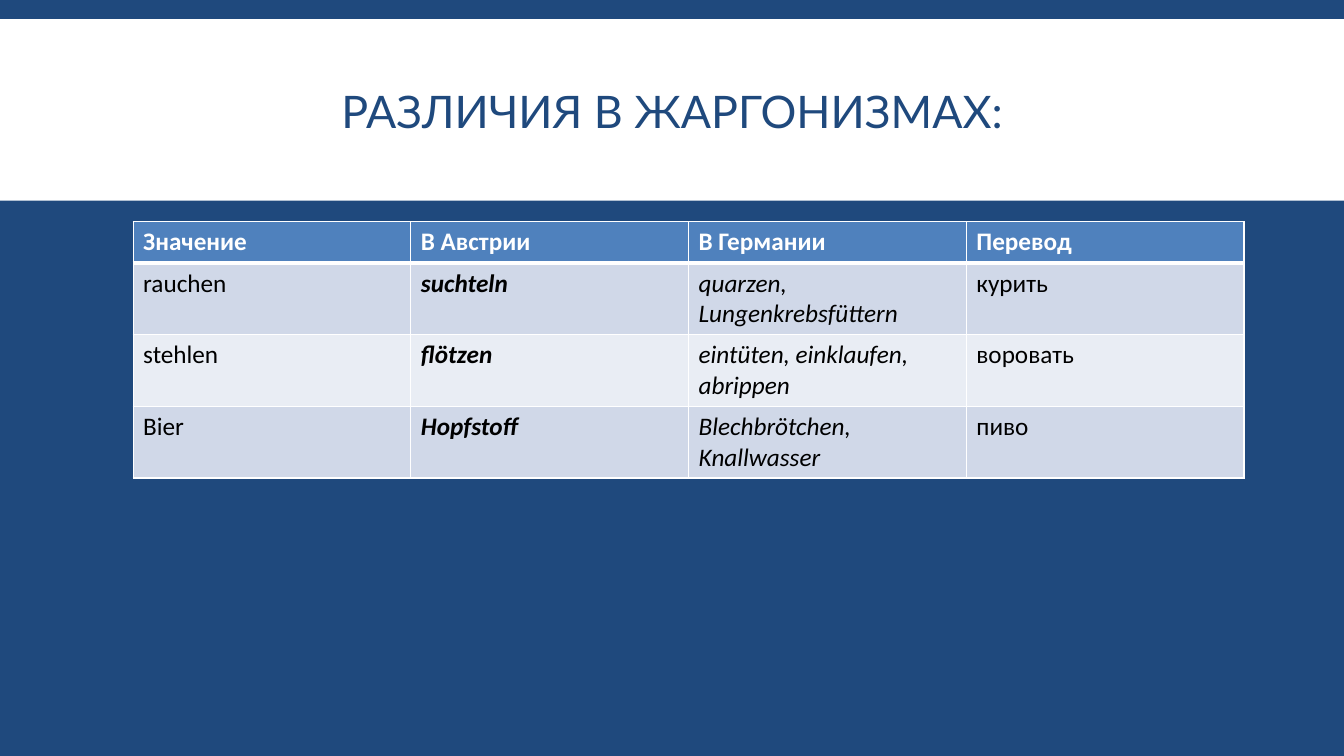
from lxml.etree import SubElement
from pptx import Presentation
from pptx.dml.color import RGBColor
from pptx.enum.shapes import MSO_SHAPE
from pptx.enum.text import MSO_ANCHOR, PP_ALIGN
from pptx.oxml.ns import qn
from pptx.util import Inches, Pt

ROWS = [
    ("Значение", "В Австрии", "В Германии", "Перевод"),
    ("rauchen", "suchteln", "quarzen, Lungenkrebsfüttern", "курить"),
    ("stehlen", "flötzen", "eintüten, einklaufen, abrippen", "воровать"),
    ("Bier", "Hopfstoff", "Blechbrötchen, Knallwasser", "пиво"),
]


def rgb(color):
    return RGBColor.from_string(color)


class SlideBuilder:
    NAVY, WHITE, BLACK = "1F497D", "FFFFFF", "000000"
    HEADER, BANDS = "4F81BD", ("E9EDF4", "D0D8E8")
    TITLE_FONT, TABLE_FONT = "Lato", "Calibri"

    def __init__(self, prs):
        self.slide = prs.slides.add_slide(prs.slide_layouts[5])
        fill = self.slide.background.fill
        fill.solid()
        fill.fore_color.rgb = rgb(self.NAVY)

    def band(self, x, y, w, h):
        sp = self.slide.shapes.add_shape(
            MSO_SHAPE.RECTANGLE, Inches(x), Inches(y), Inches(w), Inches(h))
        sp.shadow.inherit = False
        sp.fill.solid()
        sp.fill.fore_color.rgb = rgb(self.WHITE)
        sp.line.fill.background()

    def title(self, text, x, y, w, h):
        """Fill the title placeholder and bring it to the front."""
        sp = self.slide.shapes.title
        sp.element.getparent().append(sp.element)
        sp.left, sp.top, sp.width, sp.height = map(Inches, (x, y, w, h))
        tf = sp.text_frame
        tf.text = text
        tf.word_wrap = True
        tf.vertical_anchor = MSO_ANCHOR.MIDDLE
        p = tf.paragraphs[0]
        p.alignment = PP_ALIGN.CENTER
        p.line_spacing = 0.85
        self.style(p, self.TITLE_FONT, 32, self.NAVY)

    def style(self, p, name, size, color, bold=False, italic=False):
        font = p.font
        font.name, font.size = name, Pt(size)
        font.bold, font.italic = bold, italic
        font.color.rgb = rgb(color)

    def borders(self, cell, **widths):
        """Draw white cell borders; widths are points by side, in schema order."""
        tc_pr = cell._tc.get_or_add_tcPr()
        for i, (side, width) in enumerate(widths.items()):
            ln = SubElement(tc_pr, qn(f"a:{side}"), w=str(Pt(width)))
            fill = SubElement(ln, qn("a:solidFill"))
            SubElement(fill, qn("a:srgbClr"), val=self.WHITE)
            tc_pr.insert(i, ln)

    def table(self, rows, x, y, w, header_h, row_h):
        """Add a table with a header row, banded rows and italic middle columns."""
        h = header_h + row_h * (len(rows) - 1)
        table = self.slide.shapes.add_table(
            len(rows), len(rows[0]), Inches(x), Inches(y), Inches(w), Inches(h)).table
        for r, row in enumerate(rows):
            header = r == 0
            table.rows[r].height = Inches(header_h if header else row_h)
            for c, text in enumerate(row):
                cell = table.cell(r, c)
                cell.text = text
                cell.fill.solid()
                cell.fill.fore_color.rgb = rgb(self.HEADER if header else self.BANDS[r % 2])
                self.style(cell.text_frame.paragraphs[0], self.TABLE_FONT, 18,
                           self.WHITE if header else self.BLACK,
                           bold=header or c == 1, italic=not header and c in (1, 2))
                self.borders(cell, lnL=1, lnR=1, lnT=3 if r == 1 else 1,
                             lnB=3 if header else 1)


def main():
    prs = Presentation()
    prs.slide_width, prs.slide_height = Inches(13.33), Inches(7.5)
    s = SlideBuilder(prs)
    s.band(0, 0.19, 13.33, 1.8)
    s.title("РАЗЛИЧИЯ В ЖАРГОНИЗМАХ:", 1.32, 0.31, 10.7, 1.65)
    s.table(ROWS, 1.32, 2.2, 11.02, header_h=0.41, row_h=0.7)
    prs.save("out.pptx")


if __name__ == "__main__":
    main()
